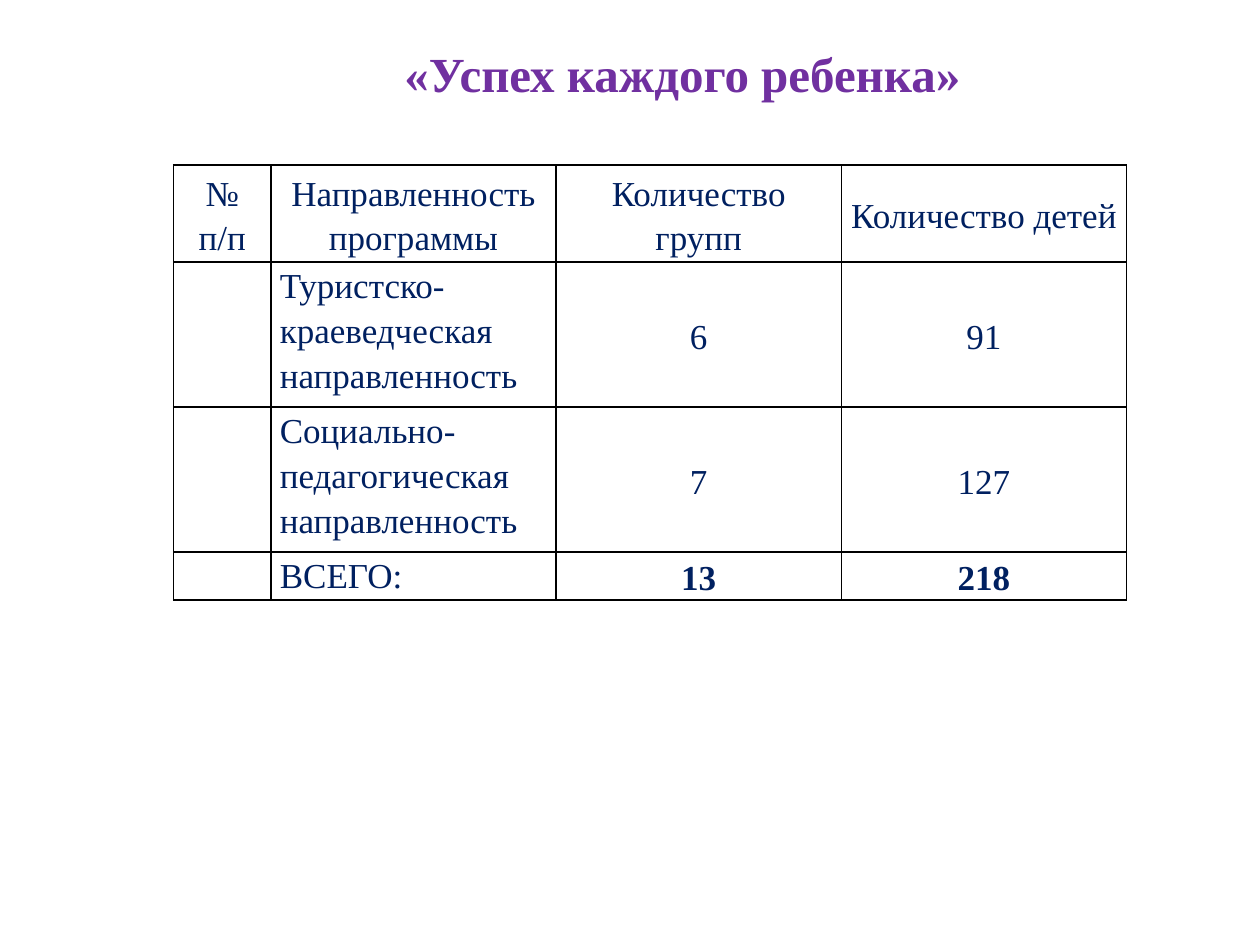
from lxml import etree
from pptx import Presentation
from pptx.dml.color import RGBColor
from pptx.enum.text import MSO_ANCHOR, MSO_AUTO_SIZE, PP_ALIGN
from pptx.oxml.ns import qn
from pptx.util import Cm, Pt

LEFT, CENTER = PP_ALIGN.LEFT, PP_ALIGN.CENTER
TOP, MIDDLE = MSO_ANCHOR.TOP, MSO_ANCHOR.MIDDLE
GROW = MSO_AUTO_SIZE.SHAPE_TO_FIT_TEXT

FONT = "Times New Roman"
NAVY, PURPLE, BLACK = "002060", "7030A0", "000000"
WIDTHS = [1.96, 5.75, 5.75, 5.75]
HEIGHTS = [1.8, 2.7, 2.7, 0.9]
ROWS = [
    ["№ п/п", "Направленность программы", "Количество групп", "Количество детей"],
    ["", "Туристско-краеведческая направленность", "6", "91"],
    ["", "Социально-педагогическая направленность", "7", "127"],
    ["", "ВСЕГО:", "13", "218"],
]


def paint(color, value):
    color.rgb = RGBColor.from_string(value)


def add_run(para, text, size, color, bold=False):
    run = para.add_run()
    run.text = text
    font = run.font
    font.name, font.size, font.bold = FONT, Pt(size), bold
    paint(font.color, color)


def add_title(slide, text):
    title = slide.shapes.title
    title.left, title.top = Cm(7.9), Cm(0.74)
    title.width, title.height = Cm(11.84), Cm(1.45)
    frame = title.text_frame
    frame.word_wrap = False
    frame.auto_size = GROW
    frame.vertical_anchor = TOP
    para = frame.paragraphs[0]
    para.alignment = LEFT
    add_run(para, text, 28, PURPLE, True)


def add_edges(cell):
    props = cell._tc.get_or_add_tcPr()
    for side in ("lnL", "lnR", "lnT", "lnB"):
        line = etree.SubElement(props, qn(f"a:{side}"), w=str(Pt(1)))
        fill = etree.SubElement(line, qn("a:solidFill"))
        etree.SubElement(fill, qn("a:srgbClr"), val=BLACK)


def fill_cell(cell, text, centred, bold):
    add_edges(cell)
    cell.fill.background()
    cell.margin_left = cell.margin_right = Cm(0.18)
    cell.margin_top = cell.margin_bottom = 0
    if not text:
        return
    cell.vertical_anchor = MIDDLE if centred else TOP
    para = cell.text_frame.paragraphs[0]
    para.alignment = CENTER if centred else LEFT
    para.line_spacing = 1.15
    add_run(para, text, 20, NAVY, bold)


def add_grid(slide):
    table = slide.shapes.add_table(
        len(ROWS), len(WIDTHS), Cm(3.5), Cm(3.33), Cm(sum(WIDTHS)), Cm(sum(HEIGHTS))
    ).table
    table.first_row = table.horz_banding = False
    for col, width in zip(table.columns, WIDTHS):
        col.width = Cm(width)
    last = len(ROWS) - 1
    for r, (row, height) in enumerate(zip(ROWS, HEIGHTS)):
        table.rows[r].height = Cm(height)
        for c, text in enumerate(row):
            centred = r == 0 or c > 1
            fill_cell(table.cell(r, c), text, centred, r == last and c > 1)


def main():
    deck = Presentation()
    deck.slide_width, deck.slide_height = Cm(25.4), Cm(19.05)
    slide = deck.slides.add_slide(deck.slide_layouts[5])
    add_grid(slide)
    add_title(slide, "«Успех каждого ребенка»")
    deck.save("out.pptx")


if __name__ == "__main__":
    main()
